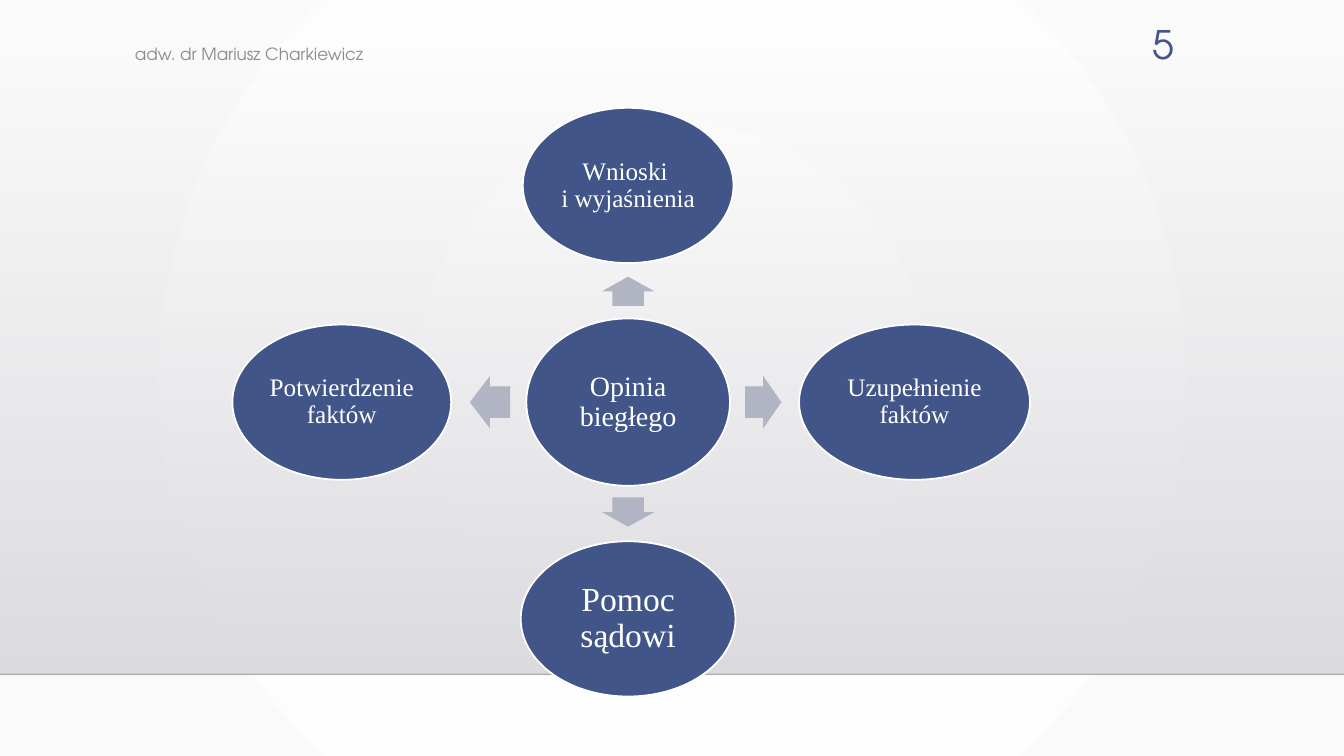
from math import cos, radians, sin

from lxml import etree
from pptx import Presentation
from pptx.dml.color import RGBColor
from pptx.enum.shapes import MSO_CONNECTOR, MSO_SHAPE
from pptx.enum.text import MSO_ANCHOR, PP_ALIGN
from pptx.oxml import parse_xml
from pptx.oxml.ns import nsdecls, qn
from pptx.util import Inches, Pt

COLORS = {"node": "415588", "arrow": "B0B4C3", "white": "FFFFFF", "footer": "8C8C8C",
          "page": "FAFAFA", "wall_top": "DCDCE0", "wall_bottom": "DEDEE2", "edge": "000001"}
SERIF, SANS = "Times New Roman", "TeX Gyre Adventor"


def gradient(first, last, direction, alpha=100):
    return parse_xml(
        f'<a:gradFill {nsdecls("a")} rotWithShape="1"><a:gsLst>'
        f'<a:gs pos="0"><a:srgbClr val="{COLORS[first]}"><a:alpha val="{alpha * 1000}"/></a:srgbClr></a:gs>'
        f'<a:gs pos="100000"><a:srgbClr val="{COLORS[last]}"/></a:gs>'
        f'</a:gsLst>{direction}</a:gradFill>')


def write(shape, text, size, font, color, align, anchor, inset=None):
    tf = shape.text_frame
    tf.word_wrap = True
    tf.vertical_anchor = anchor
    if inset is not None:
        for side in ("left", "top", "right", "bottom"):
            setattr(tf, f"margin_{side}", Inches(inset))
    p = tf.paragraphs[0]
    p.text = text
    p.alignment = align
    for name, value in {"size": Pt(size), "name": font}.items():
        setattr(p.font, name, value)
    p.font.color.rgb = RGBColor.from_string(COLORS[color])
    return p


prs = Presentation()
prs.slide_width, prs.slide_height = Inches(13.33), Inches(7.5)
s = prs.slides.add_slide(prs.slide_layouts[6])

# Background: radial glow
s.background.fill.solid()
bg = s.element.xpath(".//p:bgPr")[0]
bg.replace(bg[0], gradient("white", "page",
           '<a:path path="circle"><a:fillToRect l="50000" t="50000" r="50000" b="50000"/></a:path>'))

# Wall fading in towards the floor line
floor = Inches(6.69)
wall = s.shapes.add_shape(MSO_SHAPE.RECTANGLE, 0, Inches(0.51), prs.slide_width, floor - Inches(0.51))
wall.shadow.inherit = False
wall.line.fill.background()
wall.fill.solid()
sp_pr = wall.element.spPr
sp_pr.replace(sp_pr.find(qn("a:solidFill")),
              gradient("wall_top", "wall_bottom", '<a:lin ang="5400000" scaled="0"/>', alpha=0))

edge = s.shapes.add_connector(MSO_CONNECTOR.STRAIGHT, 0, floor, prs.slide_width, floor)
edge.line.width = Pt(1)
edge.line.color.rgb = RGBColor.from_string(COLORS["edge"])
etree.SubElement(edge.element.spPr.find(".//" + qn("a:srgbClr")), qn("a:alpha")).set("val", "20000")
etree.SubElement(edge.element.spPr, qn("a:effectLst"))

# Hub and spokes: text, size, width, height, distance from hub, angle
CX, CY = 6.23, 3.99
nodes = [("Opinia biegłego", 20, 2.02, 1.66, 0, 0),
         ("Wnioski \vi wyjaśnienia", 18, 2.09, 1.54, 2.15, 270),
         ("Uzupełnienie faktów", 18, 2.29, 1.54, 2.84, 0),
         ("Pomoc sądowi", 24, 2.13, 1.54, 2.15, 90),
         ("Potwierdzenie faktów", 18, 2.17, 1.54, 2.84, 180)]
for text, size, w, h, dist, angle in nodes:
    x = CX + dist * cos(radians(angle))
    y = CY + dist * sin(radians(angle))
    node = s.shapes.add_shape(MSO_SHAPE.OVAL, Inches(x - w / 2), Inches(y - h / 2), Inches(w), Inches(h))
    node.shadow.inherit = False
    node.fill.solid()
    node.fill.fore_color.rgb = RGBColor.from_string(COLORS["node"])
    node.line.color.rgb = RGBColor.from_string(COLORS["white"])
    node.line.width = Pt(1.25)
    p = write(node, text, size, SERIF, "white", PP_ALIGN.CENTER, MSO_ANCHOR.MIDDLE, 0.03)
    p.line_spacing = 0.9

# Arrows pointing outwards: angle, length, distance from hub
for angle, length, dist in [(270, 0.29, 1.1), (0, 0.36, 1.34), (90, 0.29, 1.09), (180, 0.4, 1.37)]:
    x = CX + dist * cos(radians(angle))
    y = CY + dist * sin(radians(angle))
    arrow = s.shapes.add_shape(MSO_SHAPE.RIGHT_ARROW, Inches(x - length / 2), Inches(y - 0.26),
                               Inches(length), Inches(0.52))
    arrow.rotation = angle
    arrow.adjustments[0], arrow.adjustments[1] = 0.6, 0.5
    arrow.shadow.inherit = False
    arrow.fill.solid()
    arrow.fill.fore_color.rgb = RGBColor.from_string(COLORS["arrow"])
    arrow.line.fill.background()

# Author and page number
author = s.shapes.add_textbox(Inches(1.24), Inches(0.36), Inches(6.49), Inches(0.34))
write(author, "adw. dr Mariusz Charkiewicz", 12, SANS, "footer", PP_ALIGN.LEFT, MSO_ANCHOR.MIDDLE)
number = s.shapes.add_textbox(Inches(10.85), Inches(0.15), Inches(0.89), Inches(0.55))
write(number, "5", 28, SANS, "node", PP_ALIGN.RIGHT, MSO_ANCHOR.TOP)

prs.save("out.pptx")
